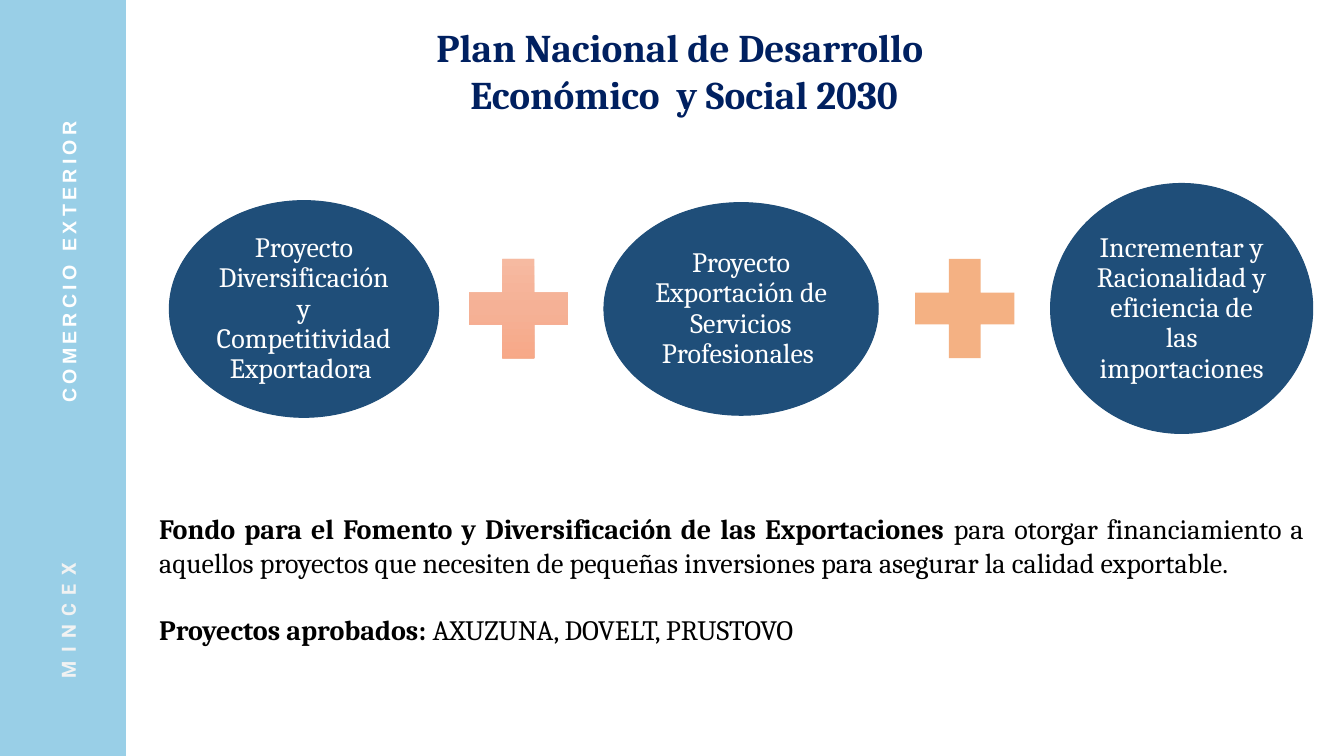
from copy import deepcopy

from pptx import Presentation
from pptx.dml.color import RGBColor
from pptx.enum.shapes import MSO_SHAPE as SHAPE
from pptx.enum.text import MSO_ANCHOR as ANCHOR, MSO_AUTO_SIZE as AUTO, PP_ALIGN as ALIGN
from pptx.util import Pt

PX = 9144  # 100 px to the inch
NAVY, OCEAN, SKY, WHITE = "002060", "1F4E79", "99CFE7", "FFFFFF"

prs = Presentation()
prs.slide_width, prs.slide_height = 1333 * PX, 750 * PX
slide = prs.slides.add_slide(prs.slide_layouts[6])


def add_shape(kind, *box, fill=None, line=None):
    shape = slide.shapes.add_shape(kind, *(n * PX for n in box))
    shape.shadow.inherit = False
    if fill:
        shape.fill.solid()
        shape.fill.fore_color.rgb = RGBColor.from_string(fill)
    if line:
        shape.line.color.rgb = RGBColor.from_string(line)
        shape.line.width = Pt(0.75)
    else:
        shape.line.fill.background()
    return shape


def write(paragraphs, box=None, frame=None, size=20, font="Cambria", color="000000",
          align=ALIGN.CENTER, tracking=0, rotation=0, gap=0, spacing=None):
    """Fill a new text box, or the given frame; a paragraph is a list of (text, bold)."""
    if frame is None:
        textbox = slide.shapes.add_textbox(*(n * PX for n in box))
        textbox.rotation = rotation
        frame = textbox.text_frame
        frame.auto_size = AUTO.SHAPE_TO_FIT_TEXT
    frame.word_wrap = True
    for i, runs in enumerate(paragraphs):
        paragraph = frame.add_paragraph() if i else frame.paragraphs[0]
        paragraph.alignment = align
        if spacing:
            paragraph.line_spacing = spacing
        if i and gap:
            paragraph.space_before = Pt(gap)
        for text, bold in runs:
            run = paragraph.add_run()
            run.text = text
            run.font.size, run.font.name, run.font.bold = Pt(size), font, bold
            run.font.color.rgb = RGBColor.from_string(color)
            if tracking:
                run.font._element.set("spc", str(tracking * 100))


# Side band
add_shape(SHAPE.RECTANGLE, 0, 0, 125, 750, fill=SKY)
write([[("MINCEX", True)]], (-14, 584, 164, 34), size=14, font="Roboto",
      color="F1F2F2", align=ALIGN.LEFT, tracking=6, rotation=270)
write([[("COMERCIO EXTERIOR", True)]], (-191, 243, 519, 34), size=14, font="Arial",
      color=WHITE, tracking=3, rotation=270)

# Title
write([[("Plan Nacional de Desarrollo ", True)], [("Económico  y Social 2030", True)]],
      (130, 18, 1097, 104), size=28, color=NAVY)

# Projects, centred on one axis and joined by plus signs
AXIS = 306
projects = [
    ("Proyecto Diversificación y Competitividad Exportadora ", 168, 267, 215),
    ("Proyecto Exportación de Servicios Profesionales ", 599, 272, 211),
    ("Incrementar y Racionalidad y eficiencia de las importaciones", 1042, 260, 248),
]
for project, left, width, height in projects:
    oval = add_shape(SHAPE.OVAL, left, AXIS - height // 2, width, height, fill=OCEAN, line=OCEAN)
    frame = oval.text_frame
    frame.margin_left = frame.margin_right = frame.margin_top = frame.margin_bottom = 3 * PX
    frame.vertical_anchor = ANCHOR.MIDDLE
    write([[(project, False)]], frame=frame, color=WHITE, spacing=0.9)

PLUS = 134
first_plus, second_plus = [
    add_shape(SHAPE.MATH_PLUS, left, AXIS - PLUS // 2, PLUS, PLUS, fill="F4B183")
    for left in (447, 890)
]
first_plus.fill.gradient()
first_plus.fill.gradient_angle = 270
stop_list = first_plus._element.spPr.gradFill.gsLst
stop_list.insert(1, deepcopy(stop_list[0]))
shades = [(0, "F7BDA5"), (0.5, "F5B196"), (1, "F8A582")]
for stop, (position, shade) in zip(first_plus.fill.gradient_stops, shades):
    stop.position = position
    stop.color.rgb = RGBColor.from_string(shade)

# Fund and approved projects
write([
    [("Fondo para el Fomento y Diversificación de las Exportaciones ", True),
     ("para otorgar financiamiento a aquellos proyectos que necesiten de pequeñas "
      "inversiones para asegurar la calidad exportable.", False)],
    [("Proyectos aprobados: ", True), ("AXUZUNA, DOVELT, PRUSTOVO", False)],
], (148, 503, 1155, 178), align=ALIGN.JUSTIFY, gap=24)

prs.save("out.pptx")
